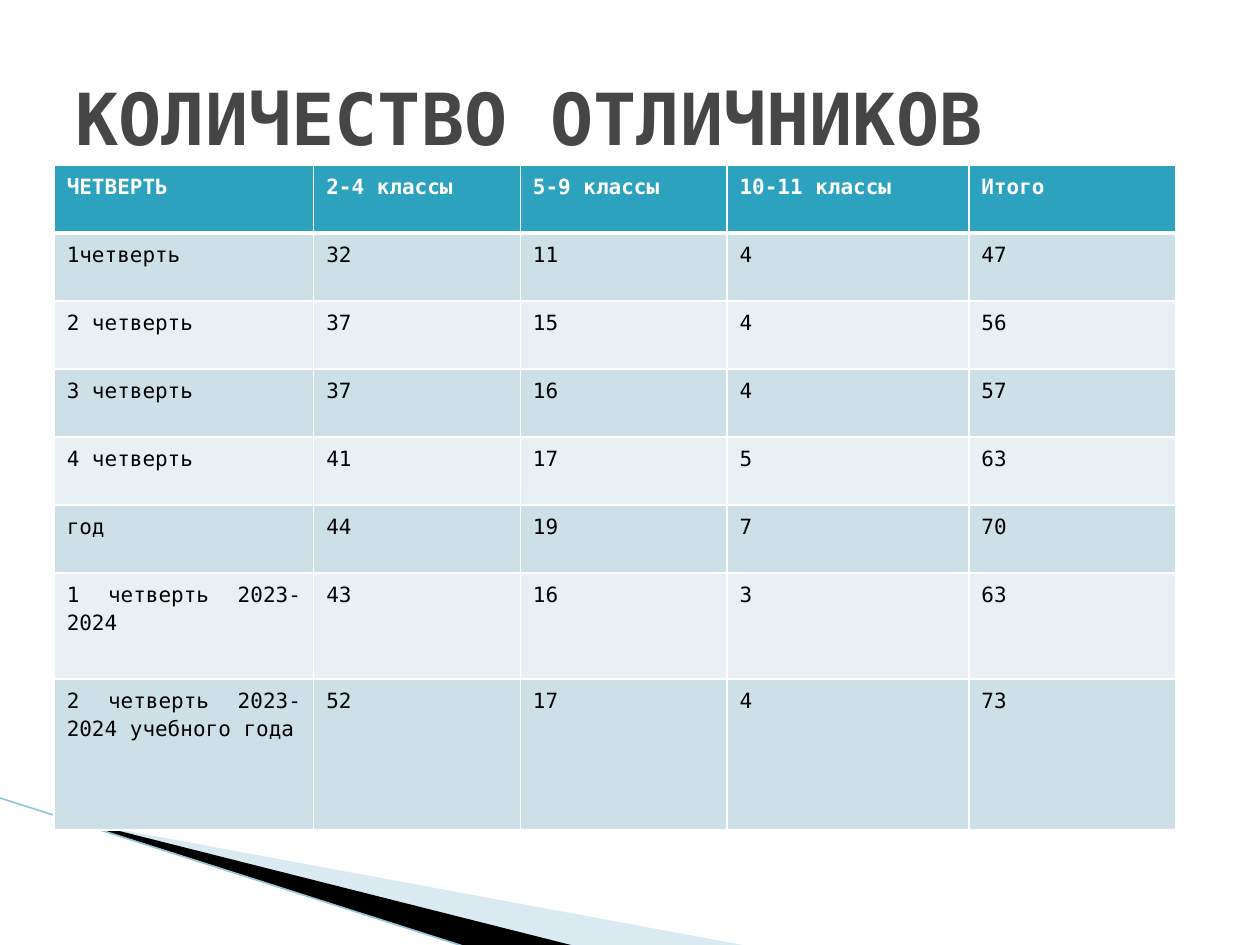
"""Build the slide that counts top pupils by quarter."""
import pptx
import pptx.util
import pptx.dml.color
import pptx.enum.shapes
import pptx.enum.text
import pptx.oxml
import pptx.oxml.ns
from lxml import etree

Pt = pptx.util.Pt
qn = pptx.oxml.ns.qn
ALIGN = pptx.enum.text.PP_ALIGN
ANCHOR = pptx.enum.text.MSO_ANCHOR

TITLE = "КОЛИЧЕСТВО ОТЛИЧНИКОВ"
ROWS = [
    ("ЧЕТВЕРТЬ", "2-4 классы", "5-9 классы", "10-11 классы", "Итого"),
    ("1четверть", "32", "11", "4", "47"),
    ("2 четверть", "37", "15", "4", "56"),
    ("3 четверть", "37", "16", "4", "57"),
    ("4 четверть", "41", "17", "5", "63"),
    ("год", "44", "19", "7", "70"),
    ("1 четверть 2023-2024", "43", "16", "3", "63"),
    ("2 четверть 2023-2024 учебного года", "52", "17", "4", "73"),
]
COLUMN_WIDTHS = (148.32, 118.08, 118.08, 138.24, 118.08)
ROW_HEIGHTS = (38.88,) * 6 + (60.48, 86.4)
TABLE_LEFT, TABLE_TOP = 30.96, 94.32
FONT = "DejaVu Sans Mono"
COLORS = {
    "white": "FFFFFF", "black": "000000", "title": "464646",
    "header": "2DA2BF", "odd": "CDE0E8", "even": "E8F0F4",
    "pale_wedge": "A0CBDC", "edge": "97C5D8",
}
WEDGES = [
    ("pale_wedge", 40, [(39.6, 468.72), (428.4, 540.72), (328.32, 540.72), (39.6, 468)]),
    ("black", 100, [(38.16, 467.28), (329.04, 540.72), (267.84, 541.44), (38.88, 468)]),
]
EDGE = (-0.72, 455.76, 267.12, 541.44)


def rgb(name):
    return pptx.dml.color.RGBColor.from_string(COLORS[name])


def write(frame, text, *, size, color, bold=False, align=ALIGN.LEFT, spacing=None):
    paragraph = frame.paragraphs[0]
    paragraph.alignment = align
    paragraph.line_spacing = spacing
    run = paragraph.add_run()
    run.text = text
    run.font.name = FONT
    run.font.size = Pt(size)
    run.font.bold = bold
    run.font.color.rgb = rgb(color)


def add_wedge(slide, color, opacity, points):
    corners = [(Pt(x), Pt(y)) for x, y in points]
    builder = slide.shapes.build_freeform(*corners[0], scale=1.0)
    builder.add_line_segments(corners[1:], close=True)
    wedge = builder.convert_to_shape()
    wedge.shadow.inherit = False
    wedge.line.fill.background()
    wedge.fill.solid()
    wedge.fill.fore_color.rgb = rgb(color)
    if opacity < 100:
        tint = wedge.fill._xPr.find(qn("a:solidFill"))[0]
        etree.SubElement(tint, qn("a:alpha"), val=str(opacity * 1000))


def add_edge(slide):
    edge = slide.shapes.add_connector(
        pptx.enum.shapes.MSO_CONNECTOR.STRAIGHT, *(Pt(value) for value in EDGE))
    edge.line.color.rgb = rgb("edge")
    edge.line.width = Pt(0.95)
    etree.SubElement(edge._element.spPr, qn("a:effectLst"))


def set_borders(cell, widths):
    properties = cell._tc.get_or_add_tcPr()
    for side, width in widths.items():
        border = etree.SubElement(properties, qn("a:ln" + side), w=str(Pt(width)))
        fill = etree.SubElement(border, qn("a:solidFill"))
        etree.SubElement(fill, qn("a:srgbClr"), val=COLORS["white"])


def add_grades(slide):
    table = slide.shapes.add_table(
        len(ROWS), len(COLUMN_WIDTHS), Pt(TABLE_LEFT), Pt(TABLE_TOP),
        Pt(sum(COLUMN_WIDTHS)), Pt(sum(ROW_HEIGHTS))).table
    for column, width in zip(table.columns, COLUMN_WIDTHS):
        column.width = Pt(width)
    for index, (values, height) in enumerate(zip(ROWS, ROW_HEIGHTS)):
        table.rows[index].height = Pt(height)
        header = index == 0
        background = "header" if header else ("even", "odd")[index % 2]
        borders = {"L": 1, "R": 1, "T": 3 if index == 1 else 1, "B": 3 if header else 1}
        for cell, value in zip(table.rows[index].cells, values):
            set_borders(cell, borders)
            cell.fill.solid()
            cell.fill.fore_color.rgb = rgb(background)
            write(cell.text_frame, value, size=12, bold=header,
                  color="white" if header else "black",
                  align=ALIGN.JUSTIFY, spacing=1.15)


def add_heading(slide):
    heading = slide.shapes.title
    heading.left, heading.top, heading.width, heading.height = (
        Pt(value) for value in (36, 21.6, 648, 90))
    heading.text_frame.vertical_anchor = ANCHOR.MIDDLE
    heading.text_frame.word_wrap = True
    write(heading.text_frame, TITLE, size=41, color="title", bold=True)


def main():
    deck = pptx.Presentation()
    deck.slide_width, deck.slide_height = Pt(720), Pt(540)
    slide = deck.slides.add_slide(deck.slide_layouts[5])
    for wedge in WEDGES:
        add_wedge(slide, *wedge)
    add_edge(slide)
    add_grades(slide)
    add_heading(slide)
    deck.save("out.pptx")


if __name__ == "__main__":
    main()
